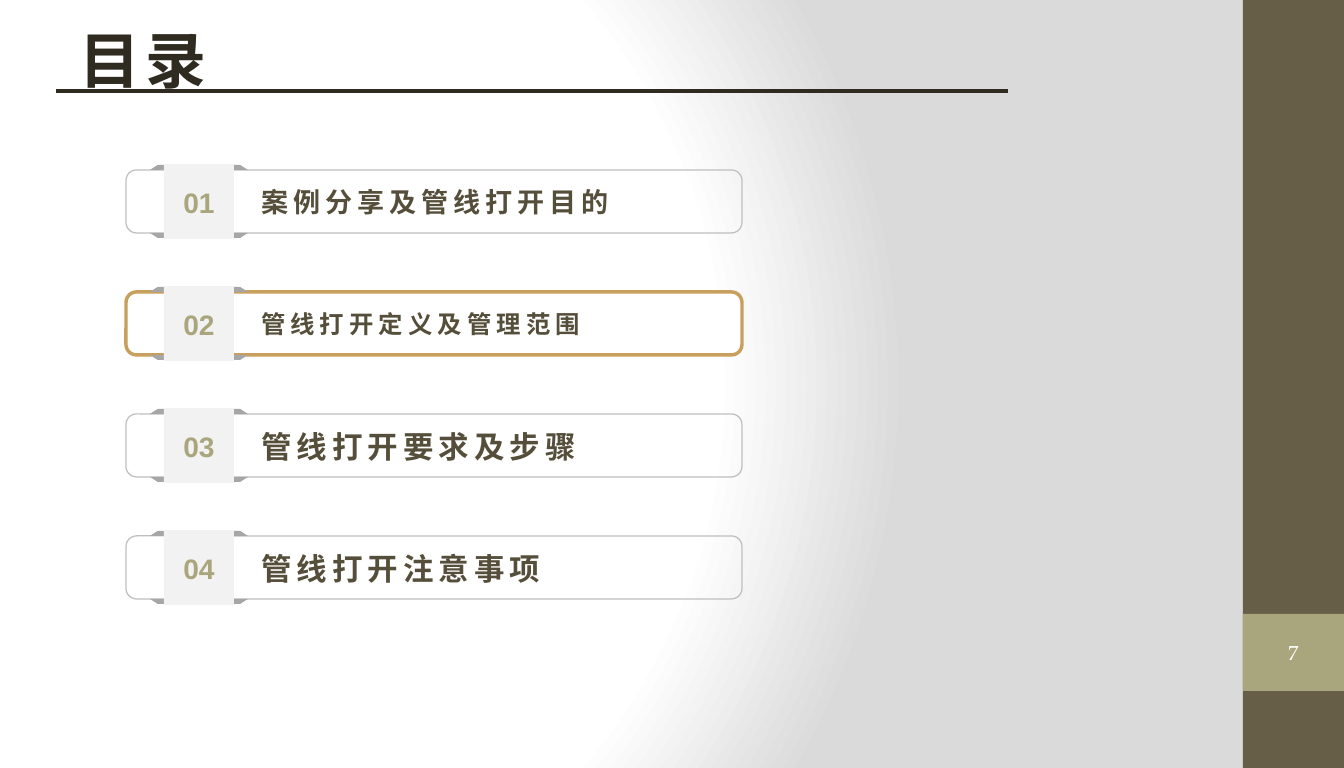
from pptx import Presentation
from pptx.dml.color import RGBColor
from pptx.enum.shapes import MSO_CONNECTOR, MSO_SHAPE as Shape
from pptx.enum.text import MSO_ANCHOR as Anchor, PP_ALIGN as Align
from pptx.oxml import parse_xml
from pptx.oxml.ns import nsdecls
from pptx.util import Emu, Pt
from lxml import etree

theme = {
    "white": "FFFFFF", "mist": "DADADA", "band": "675E47", "olive": "A9A57C",
    "ink": "2F2B20", "text": "554E3A", "border": "BFBFBF", "gold": "C89F5D",
    "fold": "A6A6A6", "tag": "F2F2F2",
    "latin": "Arial", "cjk": "Noto Sans CJK SC", "serif": "TeX Gyre Pagella",
    "title_size": 36, "number_size": 16.6, "page_size": 12,
}
PX = 914400 / 122


def add_block(kind, left, top, width, height, fill=None, line=None, weight=1):
    block = page.shapes.add_shape(
        kind, *[Emu(round(v * PX)) for v in (left, top, width, height)])
    block.shadow.inherit = False
    if fill:
        block.fill.solid()
        block.fill.fore_color.rgb = RGBColor.from_string(theme[fill])
    else:
        block.fill.background()
    if line:
        block.line.color.rgb = RGBColor.from_string(theme[line])
        block.line.width = Pt(weight)
    else:
        block.line.fill.background()
    return block


def write(box, text, size, color, font, align=Align.LEFT, bold=True, spacing=0):
    frame = box.text_frame
    frame.text = text
    frame.word_wrap = True
    frame.vertical_anchor = Anchor.MIDDLE
    para = frame.paragraphs[0]
    para.alignment = align
    span = para.runs[0]
    span.font.size = Pt(size)
    span.font.bold = bold
    span.font.color.rgb = RGBColor.from_string(theme[color])
    span.font.name = theme[font]
    props = span.font._element
    props.append(parse_xml(f'<a:ea {nsdecls("a")} typeface="{theme["cjk"]}"/>'))
    if spacing:
        props.set("spc", str(spacing * 100))
    return para


deck = Presentation()
deck.slide_width = Emu(round(1344 * PX))
deck.slide_height = Emu(round(768 * PX))
page = deck.slides.add_slide(deck.slide_layouts[6])

# Radial background
stops = "".join(
    f'<a:gs pos="{pos * 1000}"><a:srgbClr val="{theme[color]}"/></a:gs>'
    for pos, color in ((0, "white"), (75, "white"), (100, "mist")))
page.element.cSld.insert(0, parse_xml(
    f'<p:bg {nsdecls("p", "a")}><p:bgPr><a:gradFill rotWithShape="1">'
    f'<a:gsLst>{stops}</a:gsLst><a:path path="circle">'
    '<a:fillToRect l="20000" t="50000" r="100000" b="50000"/></a:path>'
    '</a:gradFill><a:effectLst/></p:bgPr></p:bg>'))

# Side band and page number
add_block(Shape.RECTANGLE, 1243, 0, 101, 768, "band")
number_box = add_block(Shape.RECTANGLE, 1243, 614, 101, 77, "olive")
write(number_box, "7", theme["page_size"], "white", "serif", Align.CENTER, False)

# Rule under the title
rule = page.shapes.add_connector(
    MSO_CONNECTOR.STRAIGHT, *[Emu(round(v * PX)) for v in (56, 91, 1008, 91)])
rule.line.color.rgb = RGBColor.from_string(theme["ink"])
rule.line.width = Pt(2.25)
etree.SubElement(
    rule._element.spPr,
    "{http://schemas.openxmlformats.org/drawingml/2006/main}effectLst")

# Agenda rows: text, type size, text width, highlighted
rows = [
    ("案例分享及管线打开目的", 16, 382, False),
    ("管线打开定义及管理范围", 14.4, 355, True),
    ("管线打开要求及步骤", 18, 355, False),
    ("管线打开注意事项", 18, 355, False),
]
for index, (topic, size, width, active) in enumerate(rows):
    top = 170 + 122 * index
    if active:
        add_block(Shape.ROUNDED_RECTANGLE, 126, top, 616, 63, "white", "gold", 2)
    else:
        add_block(Shape.ROUNDED_RECTANGLE, 126, top, 616, 63, None, "border", 0.75)

    # Folded ribbon ends below and above the row
    for fold_top, flipped in ((top + 63, True), (top - 5, False)):
        fold = add_block(Shape.TRAPEZOID, 150, fold_top, 98, 5, "fold")
        fold.adjustments[0] = 1.546
        if flipped:
            fold._element.spPr.xfrm.set("flipV", "1")

    tag = add_block(Shape.RECTANGLE, 164, top - 5, 70, 74, "tag")
    write(tag, f"{index + 1:02d}", theme["number_size"], "olive", "latin", Align.CENTER)

    label = page.shapes.add_textbox(
        *[Emu(round(v * PX)) for v in (249, top + 5, width, 54)])
    write(label, topic, size, "text", "latin", spacing=3)

# Title
title = page.shapes.add_textbox(
    *[Emu(round(v * PX)) for v in (68, 26, 1149, 51)])
heading = write(title, "目录", theme["title_size"], "ink", "cjk", spacing=3)
heading.line_spacing = 1.2
heading.space_after = Pt(3)

deck.save("out.pptx")
